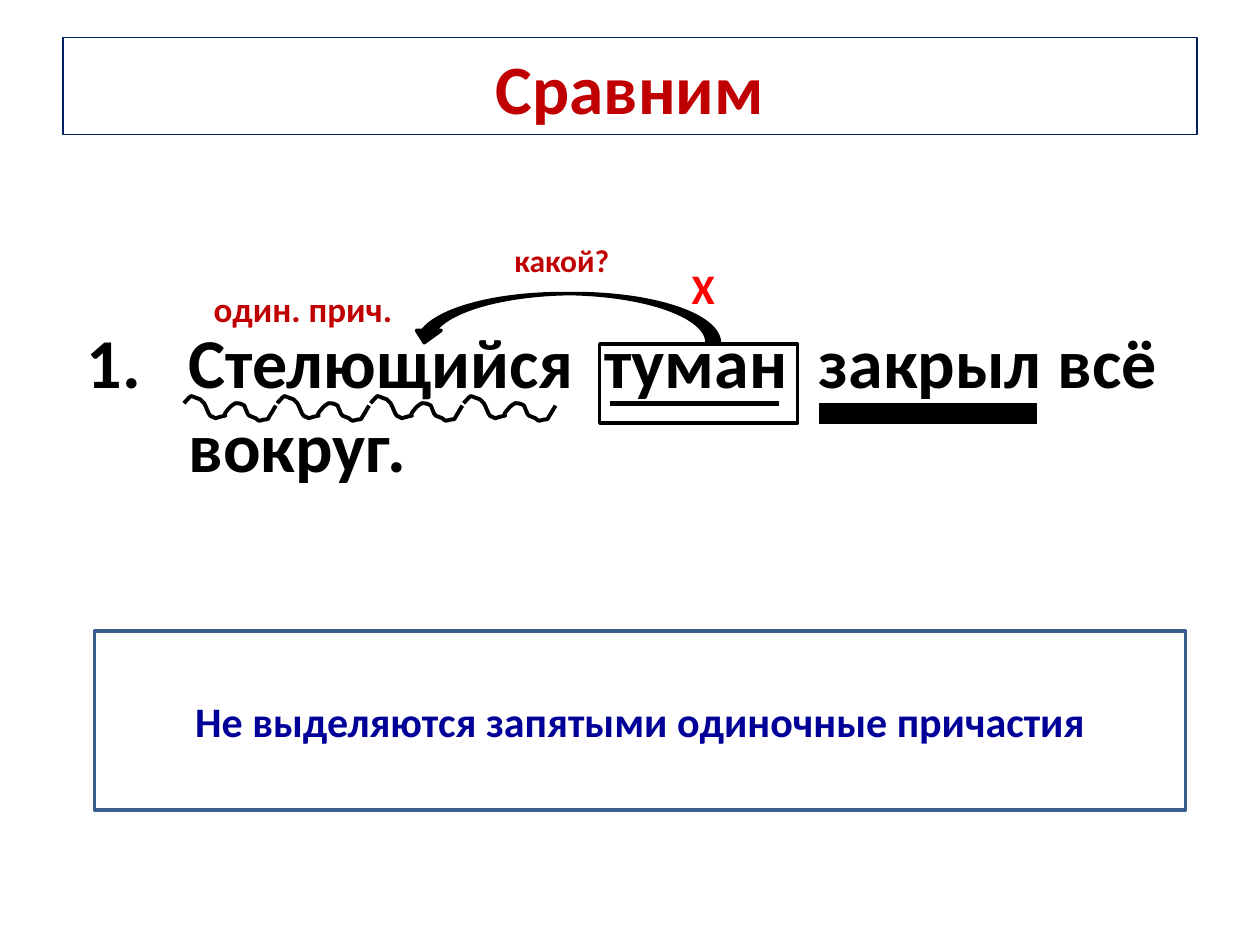
import pptx
import pptx.dml.color
import pptx.enum.shapes
import pptx.enum.text
import pptx.oxml
import pptx.oxml.ns
import pptx.util
import lxml.etree

Inches = pptx.util.Inches
Pt = pptx.util.Pt
qn = pptx.oxml.ns.qn
SHAPES = pptx.enum.shapes.MSO_SHAPE
ALIGN = pptx.enum.text.PP_ALIGN
ANCHOR = pptx.enum.text.MSO_ANCHOR

FONT = "Calibri"
COLORS = {
    "heading": "C00000", "frame": "002060", "ink": "000000", "cross": "FF0000",
    "paper": "FFFFFF", "rule_line": "3A5F8C", "rule_text": "000099",
}

HEADING = "Сравним"
SENTENCE = "Стелющийся  туман  закрыл всё вокруг."
RULE = "Не выделяются запятыми одиночные причастия"
LABELS = [
    ("Х", (5.39, 2.01, 0.31, 0.55), 24, "cross"),
    ("один. прич.", (1.54, 2.25, 1.73, 0.39), 20, "heading"),
    ("какой?", (3.98, 1.86, 0.96, 0.4), 18, "heading"),
]
UNDERLINES = [(6.5, 8.23, 3.28, 11.75), (4.84, 6.18, 3.2, 3)]
WAVE_LEFT, WAVE_TOP, WAVE_STEP, WAVE_COUNT = 1.46, 3.12, 0.74, 4
WAVE_SIZE = (0.74, 0.23)
WAVE_START = (0, 0.08)
WAVE_SEGMENTS = [
    ((0.08, 0), (0.03, 0.02), (0.13, 0.05)),
    ((0.14, 0.06), (0.15, 0.06), (0.16, 0.08)),
    ((0.18, 0.11), (0.19, 0.16), (0.21, 0.18)),
    ((0.25, 0.2),),
    ((0.41, 0.15), (0.27, 0.22), (0.35, 0.13)),
    ((0.37, 0.1), (0.41, 0.08), (0.41, 0.08)),
    ((0.43, 0.08), (0.45, 0.08), (0.48, 0.1)),
    ((0.49, 0.11), (0.49, 0.14), (0.5, 0.15)),
    ((0.5, 0.16), (0.51, 0.17), (0.52, 0.18)),
    ((0.54, 0.19), (0.55, 0.19), (0.57, 0.2)),
    ((0.58, 0.21), (0.59, 0.22), (0.6, 0.22)),
    ((0.7, 0.19), (0.64, 0.24), (0.7, 0.15)),
    ((0.71, 0.13), (0.73, 0.1), (0.73, 0.1)),
]


def color(name):
    return pptx.dml.color.RGBColor.from_string(COLORS[name])


def box(bounds):
    return [Inches(value) for value in bounds]


def write(frame, text, size, ink, align=ALIGN.CENTER, anchor=ANCHOR.MIDDLE):
    frame.word_wrap = True
    frame.vertical_anchor = anchor
    paragraph = frame.paragraphs[0]
    paragraph.alignment = align
    run = paragraph.add_run()
    run.text = text
    run.font.name = FONT
    run.font.size = Pt(size)
    run.font.bold = True
    run.font.color.rgb = color(ink)
    return paragraph


def outline(shape, ink, width, fill=None):
    shape.shadow.inherit = False
    shape.line.color.rgb = color(ink)
    shape.line.width = Pt(width)
    if fill:
        shape.fill.solid()
        shape.fill.fore_color.rgb = color(fill)
    else:
        shape.fill.background()


def add_wave(shapes, left):
    ends = [box(segment[-1]) for segment in WAVE_SEGMENTS]
    builder = shapes.build_freeform(*box(WAVE_START))
    builder.add_line_segments(ends, close=False)
    wave = builder.convert_to_shape()
    wave.left, wave.top, wave.width, wave.height = box((left, WAVE_TOP, *WAVE_SIZE))
    outline(wave, "ink", 2.25)

    route = next(wave._element.iter(qn("a:path")))
    for name, value in zip("wh", box(WAVE_SIZE)):
        route.set(name, str(value))
    for command in list(route):
        route.remove(command)
    for points in [(WAVE_START,), *WAVE_SEGMENTS]:
        tag = "a:cubicBezTo" if len(points) == 3 else "a:lnTo" if len(route) else "a:moveTo"
        command = lxml.etree.SubElement(route, qn(tag))
        for x, y in map(box, points):
            lxml.etree.SubElement(command, qn("a:pt"), x=str(x), y=str(y))


def add_heading(slide):
    heading = slide.shapes.title
    heading.left, heading.top, heading.width, heading.height = box((0.5, 0.3, 9, 0.77))
    heading.line.color.rgb = color("frame")
    heading.line.width = Pt(0.75)
    write(heading.text_frame, HEADING, 39.6, "heading")


def add_sentence(slide):
    sentence = slide.shapes.add_textbox(*box((0.59, 1.7, 9, 4.95)))
    sentence.text_frame.margin_top = Inches(0.83)
    paragraph = write(sentence.text_frame, SENTENCE, 40, "ink", ALIGN.LEFT, ANCHOR.TOP)
    properties = paragraph._p.get_or_add_pPr()
    properties.set("marL", str(Inches(0.81)))
    properties.set("indent", str(Inches(-0.81)))
    lxml.etree.SubElement(properties, qn("a:buAutoNum"), type="arabicPeriod")


def add_markup(slide):
    for left, right, y, width in UNDERLINES:
        underline = slide.shapes.add_connector(
            pptx.enum.shapes.MSO_CONNECTOR.STRAIGHT, *box((left, y, right, y)))
        underline.line.color.rgb = color("ink")
        underline.line.width = Pt(width)
        lxml.etree.SubElement(underline._element.spPr, qn("a:effectLst"))

    noun_frame = slide.shapes.add_shape(SHAPES.RECTANGLE, *box((4.76, 2.73, 1.57, 0.63)))
    outline(noun_frame, "ink", 2)

    waves = slide.shapes.add_group_shape()
    for index in range(WAVE_COUNT):
        add_wave(waves.shapes, WAVE_LEFT + index * WAVE_STEP)
    waves.left, waves.top = box((WAVE_LEFT, WAVE_TOP))
    waves.width, waves.height = box((WAVE_STEP * WAVE_COUNT, WAVE_SIZE[1]))
    frame = waves._element.grpSpPr.find(qn("a:xfrm"))
    for tag, names, values in [
        ("a:chOff", "xy", (waves.left, waves.top)),
        ("a:chExt", ("cx", "cy"), (waves.width, waves.height)),
    ]:
        for name, value in zip(names, values):
            frame.find(qn(tag)).set(name, str(value))

    question_arrow = slide.shapes.add_shape(
        SHAPES.CURVED_DOWN_ARROW, *box((3.27, 2.33, 2.44, 0.39)))
    outline(question_arrow, "ink", 2, "ink")
    question_arrow._element.spPr.xfrm.set("flipH", "1")

    for text, bounds, size, ink in LABELS:
        label = slide.shapes.add_textbox(*box(bounds))
        write(label.text_frame, text, size, ink)
        label.text_frame.word_wrap = False


def add_rule(slide):
    rule = slide.shapes.add_shape(SHAPES.RECTANGLE, *box((0.75, 5.01, 8.66, 1.42)))
    outline(rule, "rule_line", 2, "paper")
    write(rule.text_frame, RULE, 24, "rule_text")


def main():
    deck = pptx.Presentation()
    deck.slide_width, deck.slide_height = box((10, 7.5))
    slide = deck.slides.add_slide(deck.slide_layouts[5])
    add_heading(slide)
    add_sentence(slide)
    add_markup(slide)
    add_rule(slide)
    deck.save("out.pptx")


if __name__ == "__main__":
    main()
